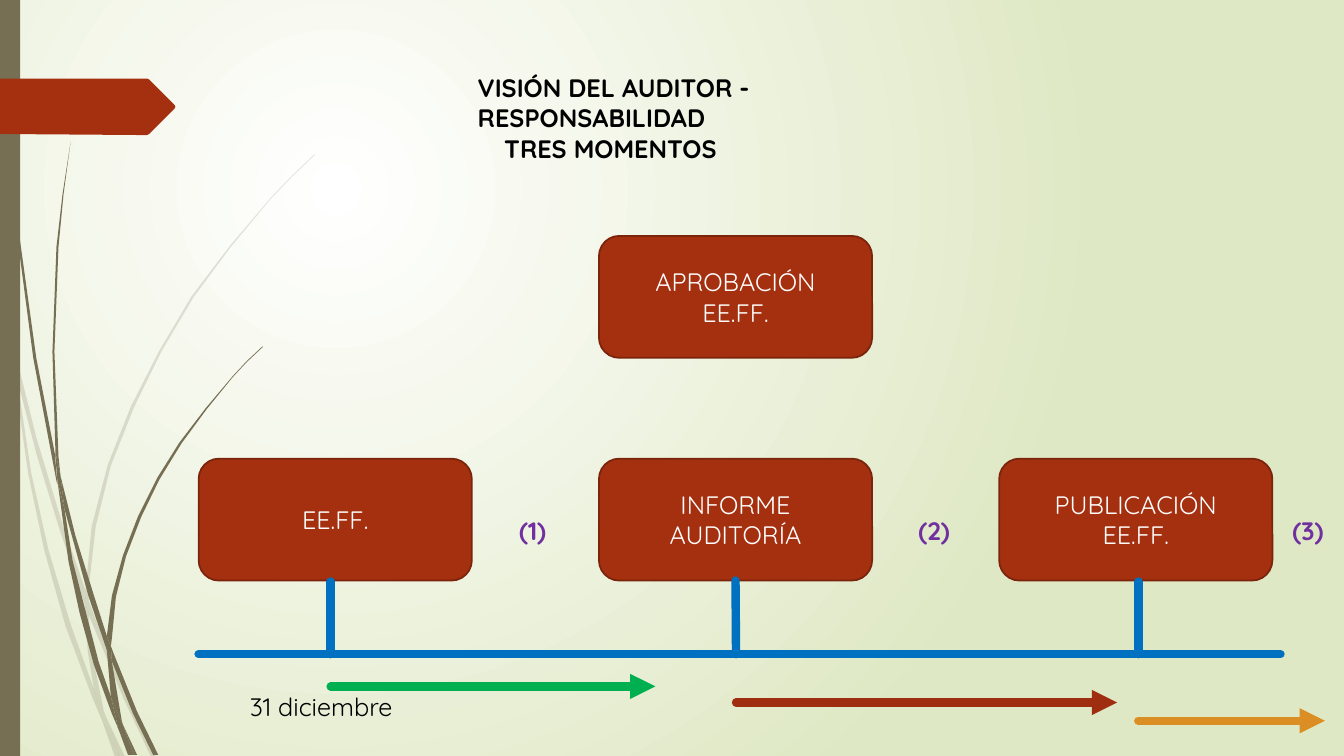
import pptx
import pptx.dml.color
import pptx.enum.dml
import pptx.enum.shapes
import pptx.enum.text
import pptx.oxml
import pptx.oxml.ns
import pptx.util
from pptx.util import Inches

SHAPE = pptx.enum.shapes.MSO_SHAPE
ALIGN = pptx.enum.text.PP_ALIGN
BROWN, RUST, BLUE, PURPLE = "766F54", "A53010", "0070C0", "7030A0"

PALE_STRANDS = [
    [(.11, 3.5), (.09, 3.22), (0, 2.82), (0, 2.99), (.1, 3.44)],
    [(.58, 5.22), (.84, 5.99), (.85, 5.86), (.62, 5.2), (.36, 4.34), (.14, 3.45), (.17, 3.76), (.36, 4.5)],
    [(.92, 6.07), (.88, 5.96), (.88, 6.1), (1.23, 6.94), (1.5, 7.51), (1.55, 7.51), (1.27, 6.92)],
    [(1.19, 7.51), (1.24, 7.51), (1.05, 7.11)],
    [(.93, 6.83), (.7, 6.19), (.48, 5.45), (.31, 4.69), (.17, 3.76), (.11, 3.5), (.28, 4.7), (.44, 5.46),
     (.65, 6.21), (.92, 6.93), (1.01, 7.14), (.99, 7.07)],
    [(.84, 5.99), (.87, 6.46), (.93, 6.83), (.96, 6.92), (1.05, 7.11), (1.03, 7.06), (.91, 6.46), (.88, 6.1),
     (.88, 6.08)],
    [(.88, 5.84), (.95, 5.22), (1.1, 4.62), (1.33, 4.04), (1.6, 3.49), (1.92, 2.95), (2.29, 2.45), (2.68, 1.98),
     (2.9, 1.75), (3.12, 1.54), (3.12, 1.53), (2.89, 1.75), (2.68, 1.97), (2.28, 2.44), (1.9, 2.94),
     (1.58, 3.48), (1.3, 4.03), (1.07, 4.61), (.91, 5.22), (.85, 5.84), (.85, 5.86), (.88, 5.96)],
    [(1.01, 7.14), (1.14, 7.51), (1.19, 7.51)],
    [(.88, 6.08), (.88, 6.1), (.88, 5.96), (.85, 5.86), (.84, 5.99)],
    [(.96, 6.92), (.93, 6.83), (.99, 7.07), (1.01, 7.14), (1.19, 7.51), (1.05, 7.11)],
]
DARK_STRANDS = [
    [(.07, 1.1), (.17, 2.33), (.33, 3.55), (.56, 4.77), (.57, 4.81), (.55, 4.57), (.55, 4.53), (.36, 3.55),
     (.19, 2.32), (.08, 1.09), (.05, .48), (.04, 0), (.03, 0), (.04, .48)],
    [(.88, 5.92), (1.06, 6.45), (1.06, 6.33), (1.06, 6.31), (.93, 5.9), (.75, 5.32), (.6, 4.72), (.64, 5.05)],
    [(1.13, 6.49), (1.1, 6.41), (1.11, 6.56), (1.32, 7.08), (1.52, 7.49), (1.57, 7.49), (1.36, 7.06)],
    [(1.1, 6.91), (.98, 6.57), (.72, 5.56), (.64, 5.05), (.57, 4.77), (.68, 5.57), (.79, 6.08), (.93, 6.59),
     (1.11, 7.08), (1.17, 7.22), (1.16, 7.17)],
    [(.6, 4.72), (.58, 4.53), (.54, 3.49), (.58, 2.45), (.63, 1.93), (.7, 1.41), (.62, 1.93), (.56, 2.45),
     (.52, 3.49), (.55, 4.49)],
    [(1.33, 7.49), (1.36, 7.49), (1.22, 7.19)],
    [(.57, 4.77), (.64, 5.05), (.6, 4.72), (.55, 4.49), (.55, 4.53)],
    [(1.11, 6.33), (1.15, 5.92), (1.25, 5.52), (1.4, 5.13), (1.58, 4.76), (1.8, 4.4), (2.05, 4.06), (2.31, 3.74),
     (2.45, 3.59), (2.61, 3.44), (2.6, 3.44), (2.45, 3.58), (2.31, 3.73), (2.04, 4.05), (1.78, 4.39),
     (1.56, 4.74), (1.37, 5.12), (1.22, 5.51), (1.11, 5.91), (1.06, 6.31), (1.1, 6.41)],
    [(1.17, 7.22), (1.27, 7.49), (1.31, 7.49)],
    [(1.06, 6.45), (1.1, 6.91), (1.16, 7.06), (1.22, 7.19), (1.21, 7.16), (1.11, 6.56), (1.09, 6.51)],
    [(1.06, 6.45), (1.09, 6.51), (1.11, 6.56), (1.1, 6.41), (1.06, 6.31), (1.06, 6.33)],
    [(1.16, 7.06), (1.1, 6.91), (1.16, 7.17), (1.17, 7.22), (1.3, 7.49), (1.33, 7.49), (1.22, 7.19)],
]
FLAG = [(1.73, 1.08), (1.48, 1.33), (1.46, 1.34), (1.36, 1.34), (0, 1.33), (0, .78), (1.46, .78), (1.48, .79),
        (1.73, 1.04), (1.74, 1.06)]


def rgb(value):
    """Turn a hex string into a colour."""
    return pptx.dml.color.RGBColor.from_string(value)


class TimelineSlide:
    """Holds the text style and the page, and draws each kind of element."""

    font_name = "Quicksand"
    font_size = 18

    def __init__(self, page):
        """Keep the page to draw on."""
        self.page = page

    def background(self, inner, outer):
        """Fill the page with a radial gradient."""
        fill = self.page.background.fill
        fill.gradient()
        for stop, position, color in zip(fill.gradient_stops, (0, 1), (inner, outer)):
            stop.position = position
            stop.color.rgb = rgb(color)
        linear = next(self.page.element.iter(pptx.oxml.ns.qn("a:lin")))
        radial = pptx.oxml.parse_xml(
            f'<a:path {pptx.oxml.ns.nsdecls("a")} path="circle">'
            '<a:fillToRect l="50000" t="50000" r="100000" b="100000"/></a:path>')
        linear.getparent().replace(linear, radial)

    def paint(self, shape, color, edge=None):
        """Give a shape a flat fill and an optional edge."""
        shape.shadow.inherit = False
        shape.fill.solid()
        shape.fill.fore_color.rgb = rgb(color)
        if edge:
            shape.line.color.rgb = rgb(edge)
            shape.line.width = pptx.util.Pt(1.25)
        else:
            shape.line.fill.background()

    def outline(self, shapes, points, color, opacity=100):
        """Draw a closed outline through points."""
        corners = [(Inches(x), Inches(y)) for x, y in points]
        builder = shapes.build_freeform(*corners[0])
        builder.add_line_segments(corners[1:], close=True)
        shape = builder.convert_to_shape()
        self.paint(shape, color)
        if opacity < 100:
            tint = next(shape.element.spPr.iter(pptx.oxml.ns.qn("a:srgbClr")))
            tint.append(pptx.oxml.parse_xml(
                f'<a:alpha {pptx.oxml.ns.nsdecls("a")} val="{opacity * 1000}"/>'))

    def strands(self, outlines, opacity=100):
        """Draw a group of grass strands."""
        group = self.page.shapes.add_group_shape()
        for points in outlines:
            self.outline(group.shapes, points, BROWN, opacity)

    def set_lines(self, frame, lines, color, bold=False):
        """Put aligned lines into a text frame."""
        for index, (text, alignment) in enumerate(lines):
            para = frame.paragraphs[0] if index == 0 else frame.add_paragraph()
            para.text = text
            para.alignment = alignment
            para.font.name = self.font_name
            para.font.size = pptx.util.Pt(self.font_size)
            para.font.bold = bold
            para.font.color.rgb = rgb(color)

    def block(self, kind, left, top, width, height, color, edge=None):
        """Draw a filled preset shape."""
        shape = self.page.shapes.add_shape(kind, Inches(left), Inches(top), Inches(width), Inches(height))
        self.paint(shape, color, edge)
        return shape

    def milestone(self, left, top, *lines):
        """Draw a rounded box with centred lines."""
        box = self.block(SHAPE.ROUNDED_RECTANGLE, left, top, 2.71, 1.21, RUST, "7A240C")
        box.text_frame.vertical_anchor = pptx.enum.text.MSO_ANCHOR.MIDDLE
        self.set_lines(box.text_frame, [(line, ALIGN.CENTER) for line in lines], "FFFFFF")
        return box

    def label(self, left, top, width, height, lines, color="000000", bold=False, wrap=False):
        """Place a text box."""
        box = self.page.shapes.add_textbox(Inches(left), Inches(top), Inches(width), Inches(height))
        box.text_frame.word_wrap = wrap
        self.set_lines(box.text_frame, lines, color, bold)

    def line(self, start, end, color, arrow=False):
        """Draw a thick round-capped line, with an optional arrowhead."""
        link = self.page.shapes.add_connector(
            pptx.enum.shapes.MSO_CONNECTOR.STRAIGHT, *map(Inches, start + end))
        link.line.color.rgb = rgb(color)
        link.line.width = pptx.util.Pt(6)
        stroke = link.element.spPr.find(pptx.oxml.ns.qn("a:ln"))
        stroke.set("cap", "rnd")
        names = pptx.oxml.ns.nsdecls("a")
        if arrow:
            stroke.append(pptx.oxml.parse_xml(f'<a:tailEnd {names} type="triangle"/>'))
        link.element.spPr.append(pptx.oxml.parse_xml(f"<a:effectLst {names}/>"))
        return link


def main():
    """Build the slide and save it."""
    deck = pptx.Presentation()
    deck.slide_width, deck.slide_height = Inches(13.33), Inches(7.5)
    slide = TimelineSlide(deck.slides.add_slide(deck.slide_layouts[6]))

    slide.background("FFFFFF", "DFE8C4")
    slide.strands(PALE_STRANDS, 20)
    slide.strands(DARK_STRANDS)
    slide.block(SHAPE.RECTANGLE, 0, 0, .2, 7.5, BROWN)
    slide.outline(slide.page.shapes, FLAG, RUST)

    slide.milestone(1.97, 4.55, "EE.FF.")
    report = slide.milestone(5.94, 4.55, "INFORME", "AUDITORÍA")
    slide.milestone(9.91, 4.55, "PUBLICACIÓN", "EE.FF.")
    slide.milestone(5.94, 2.34, "APROBACIÓN", "EE.FF.")

    slide.line((1.97, 6.49), (12.7, 6.49), BLUE)
    ticks = [slide.line((x, 5.77), (x, 6.49), BLUE) for x in (3.28, 7.3, 11.29)]
    ticks[1].begin_connect(report, 2)
    for left, right, y, color in ((7.3, 11.08, 6.97, "9E2E0F"), (3.28, 6.5, 6.81, "00B050"),
                                  (11.29, 13.14, 7.15, "DA8E24")):
        slide.line((left, y), (right, y), color, arrow=True)

    title = [("VISIÓN DEL AUDITOR - RESPONSABILIDAD", ALIGN.LEFT), ("TRES MOMENTOS ", ALIGN.CENTER)]
    slide.label(4.64, .67, 2.9, 1.01, title, bold=True, wrap=True)
    slide.label(2.38, 6.81, 1.8, .4, [("31 diciembre", ALIGN.LEFT)])
    for number, left in enumerate((5.05, 9.01, 12.72), 1):
        slide.label(left, 5.06, .54, .4, [(f"({number})", ALIGN.LEFT)], PURPLE, bold=True)

    deck.save("out.pptx")


if __name__ == "__main__":
    main()
